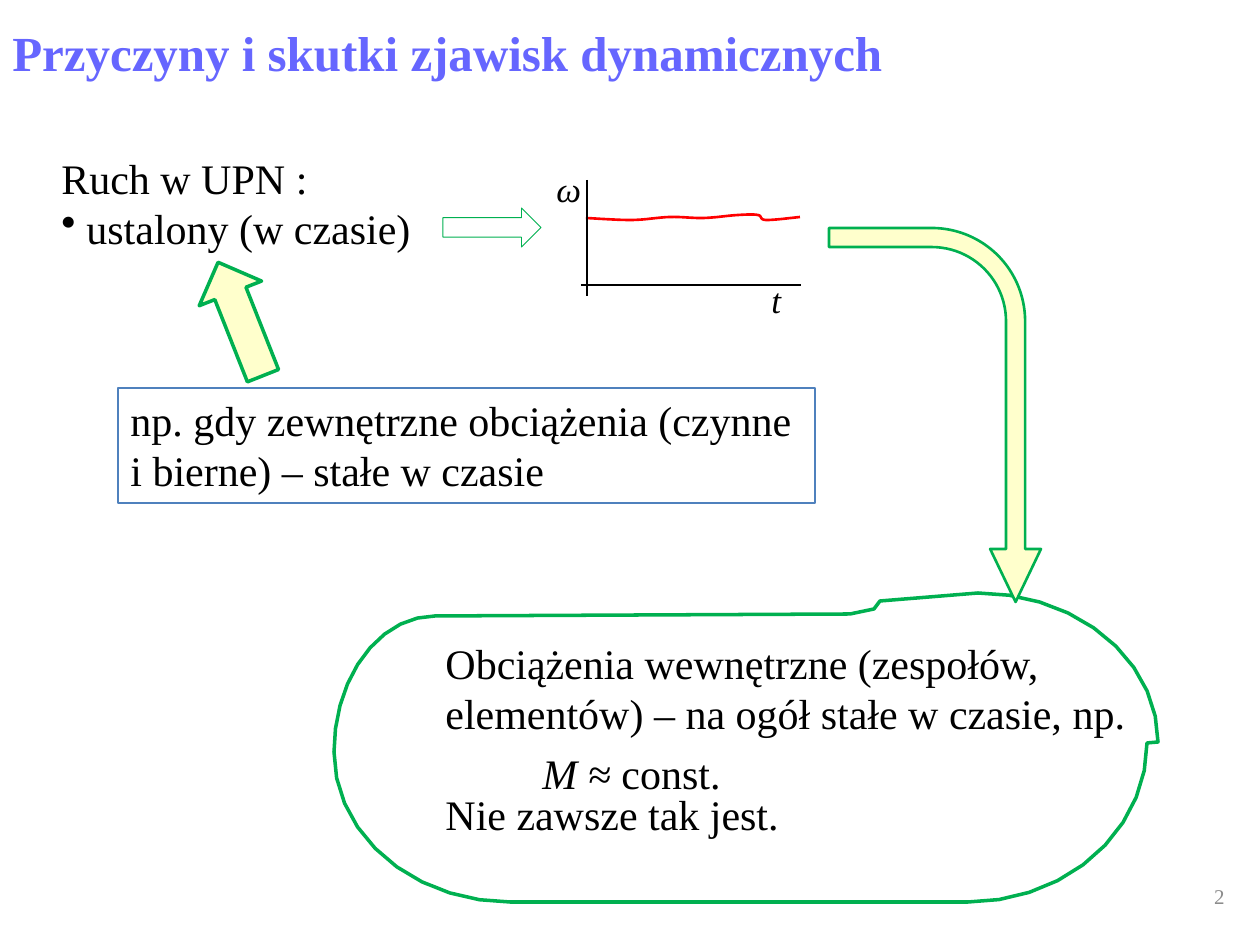
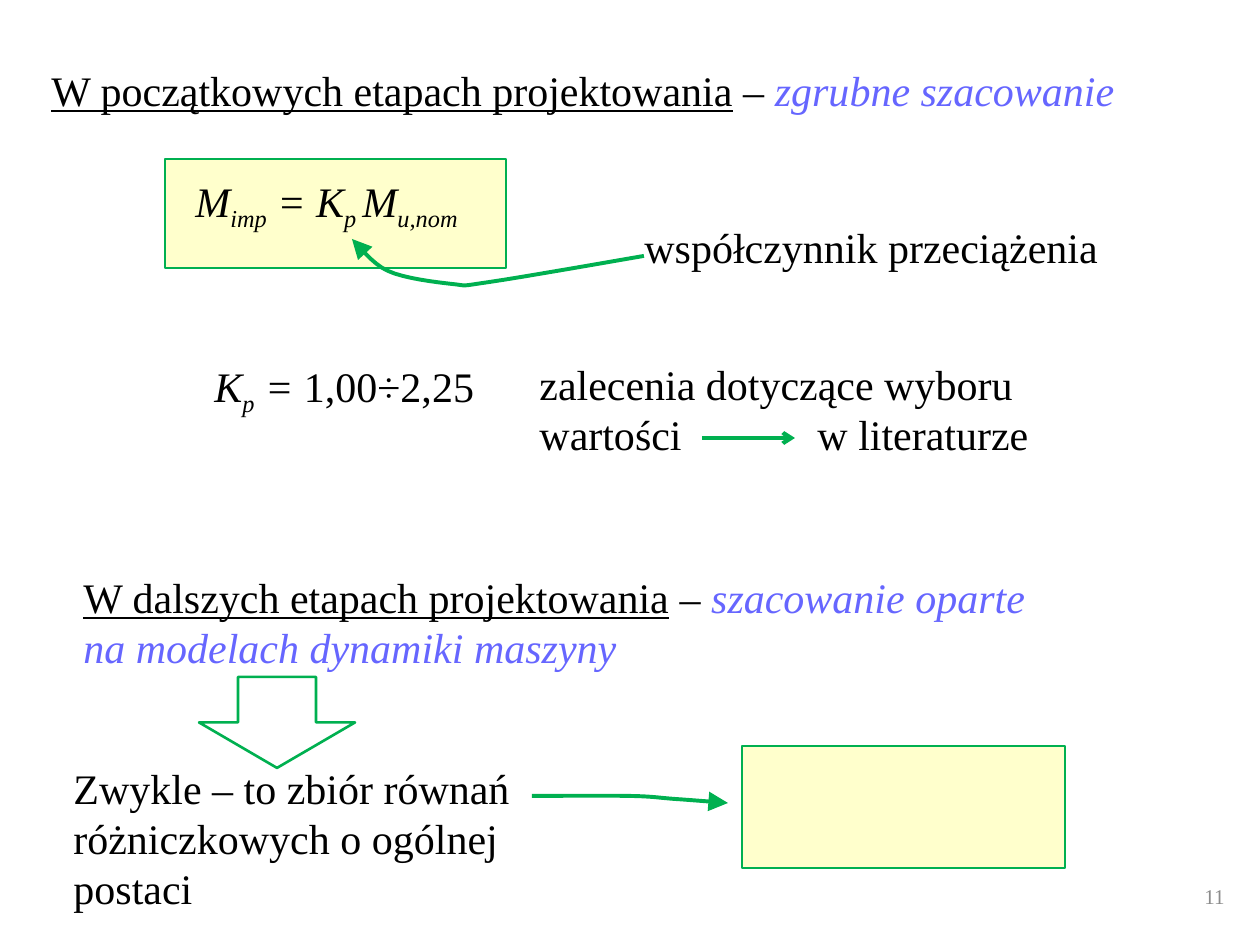
from math import cos, radians, sin

from lxml import etree
from pptx import Presentation
from pptx import util as u
from pptx.dml.color import RGBColor
from pptx.enum import shapes, text
from pptx.oxml.ns import qn

PX = 914400 / 126
FONT = "Times New Roman"
TITLE, BODY, AXIS, SMALL = 28, 24, 20, 12
BLACK, BLUE, GREY, RED = "000000", "6666FF", "8C8C8C", "FF0000"
GREEN, CREAM, FRAME = "00B050", "FFFFCC", "4F81BD"
THIN, MEDIUM, CLOUD, THICK = 0.75, 1.5, 2, 2.25
NUMBER_BOX = (1182, 871, 55, 50)
NOTE_BOX = (118, 388, 697, 115)
BULLET_INDENT, TAB_STOP = round(25 * PX), round(278 * PX)
FORMULA_GAP = u.Pt(29)
rgb = RGBColor.from_string
SH = shapes.MSO_SHAPE


def style(sp, fill, line, width, head=None, tail=None):
    """Set fill, line and arrowheads, and switch the shadow off."""
    if fill:
        sp.fill.solid()
        sp.fill.fore_color.rgb = rgb(fill)
    elif hasattr(sp, "fill"):
        sp.fill.background()
    sp.line.color.rgb = rgb(line)
    sp.line.width = u.Pt(width)
    spPr = sp._element.spPr
    for tag, kind in (("a:headEnd", head), ("a:tailEnd", tail)):
        if kind:
            size = "lg" if kind == "triangle" else "med"
            etree.SubElement(spPr.find(qn("a:ln")), qn(tag), type=kind, w=size, len=size)
    etree.SubElement(spPr, qn("a:effectLst"))


def outline(s, pts, line, width, closed=False, **ends):
    """Draw a closed outline, or an open curve running smoothly through pts."""
    if not closed:
        # Catmull-Rom: each span is shaped by its two ends and their neighbours
        padded = [pts[0], *pts, pts[-1]]
        curve = [pts[0]]
        for span in zip(padded, padded[1:], padded[2:], padded[3:]):
            for t in [n / 8 for n in range(1, 9)]:
                curve.append([b + t / 2 * (c - a + t * (2 * a - 5 * b + 4 * c - d
                                                        + t * (3 * b - a - 3 * c + d)))
                              for a, b, c, d in zip(*span)])
        pts = curve
    pts = [(x * PX, y * PX) for x, y in pts]
    fb = s.shapes.build_freeform(*pts[0])
    fb.add_line_segments(pts[1:], close=closed)
    style(fb.convert_to_shape(), None, line, width, **ends)


prs = Presentation()
prs.slide_width, prs.slide_height = u.Inches(10), u.Inches(7.5)
causes, stages = [prs.slides.add_slide(prs.slide_layouts[6]) for _ in range(2)]

# Speed over time: nearly constant, with one small dip
speed = [(586, 218), (632, 220), (670, 217), (704, 218), (738, 215), (758, 215),
         (766, 220), (800, 217)]
outline(causes, speed, RED, MEDIUM)

# Cloud: a quarter ellipse per corner, clockwise from the top right,
# then a small step where the top edge meets the raised right part
corners = [(978, 742, 180, 149), (968, 743, 179, 159), (510, 752, 176, 150), (435, 752, 101, 136)]
step_up = [(850, 614), (874, 609), (880, 601)]
cloud = []
for quarter, (cx, cy, rx, ry) in enumerate(corners):
    start = 90 * quarter - 90
    for angle in range(start, start + 91, 10):
        cloud.append((cx + rx * cos(radians(angle)), cy + ry * sin(radians(angle))))
outline(causes, cloud + step_up, GREEN, CLOUD, closed=True)

# Block arrows and boxes: slide, shape, place, rotation, fill, line width, adjustments
for s, kind, place, turn, fill, width, adj in [
    (causes, SH.RIGHT_ARROW, (443, 208, 98, 39), 0, None, 0.5, ()),
    (causes, SH.UP_ARROW, (207, 258, 67, 122), 338.4, CREAM, CLOUD, ()),
    (causes, SH.BENT_ARROW, (748, 309, 374, 212), 90, CREAM, MEDIUM, (0.09, 0.12, 0.25, 0.44)),
    (stages, SH.RECTANGLE, (165, 159, 341, 109), 0, CREAM, MEDIUM, ()),
    (stages, SH.DOWN_ARROW, (199, 677, 156, 91), 0, None, MEDIUM, ()),
    (stages, SH.RECTANGLE, (742, 746, 323, 122), 0, CREAM, MEDIUM, ()),
]:
    sp = s.shapes.add_shape(kind, *[u.Emu(round(v * PX)) for v in place])
    sp.rotation = turn
    for i, value in enumerate(adj):
        sp.adjustments[i] = value
    style(sp, fill, GREEN, width)

# Chart axes and the straight arrow: slide, from and to, colour, line width, arrowhead
for s, ends, line, width, tail in [
    (causes, (587, 180, 587, 296), BLACK, THIN, None),
    (causes, (581, 285, 801, 285), BLACK, THIN, None),
    (stages, (702, 438, 795, 438), GREEN, THICK, "arrow"),
]:
    axis = s.shapes.add_connector(shapes.MSO_CONNECTOR.STRAIGHT,
                                  *[u.Emu(round(v * PX)) for v in ends])
    style(axis, None, line, width, tail=tail)

# Curved arrows: to the overload factor, and to the empty box
to_factor = [(352, 239), (388, 271), (452, 284), (490, 282), (644, 256)]
to_equations = [(532, 796), (630, 796), (675, 799), (728, 803)]
outline(stages, to_factor, GREEN, THICK, head="triangle")
outline(stages, to_equations, GREEN, THICK, tail="triangle")

# Texts: slide, place, size, colour, paragraphs of (run, marks)
# Run marks: b bold, i italic, u underlined, s subscript, c accent colour
# Paragraph marks: * bullet, g gap above for the formula
texts = [
    (causes, (0, 16, 1023, 72), TITLE, BLUE, [[("Przyczyny i skutki zjawisk dynamicznych", "b")]]),
    (causes, (49, 146, 1211, 115), BODY, BLACK,
     [[("Ruch w UPN :", "")], [("ustalony (w czasie)", "*")]]),
    (causes, (544, 161, 55, 55), AXIS, BLACK, [[("ω", "i")]]),
    (causes, (759, 272, 55, 55), AXIS, BLACK, [[("t", "i")]]),
    (causes, (530, 741, 208, 63), BODY, BLACK, [[("M ≈ ", "i"), ("const.", "")]]),
    (causes, (433, 631, 740, 217), BODY, BLACK,
     [[("Obciążenia wewnętrzne (zespołów, elementów) – na ogół stałe w czasie, np.", "")],
      [("Nie zawsze tak jest.", "g")]]),
    (causes, NOTE_BOX, BODY, BLACK,
     [[("np. gdy zewnętrzne obciążenia (czynne i bierne) – stałe w czasie", "")]]),
    (causes, NUMBER_BOX, SMALL, GREY, [[("2", "")]]),
    (stages, (39, 58, 1221, 63), BODY, BLACK,
     [[("W początkowych etapach projektowania", "u"), (" – ", ""),
       ("zgrubne szacowanie", "ic")]]),
    (stages, (183, 169, 325, 63), BODY, BLACK,
     [[("M", "i"), ("imp", "is"), (" = K", "i"), ("p ", "is"), ("M", "i"), ("u,nom", "is")]]),
    (stages, (632, 215, 518, 63), BODY, BLACK, [[("współczynnik przeciążenia", "")]]),
    (stages, (202, 354, 325, 63), BODY, BLACK,
     [[("K", "i"), ("p", "is"), (" = ", "i"), ("1,00÷2,25", "")]]),
    (stages, (527, 352, 533, 115), BODY, BLACK,
     [[("zalecenia dotyczące wyboru wartości\tw literaturze", "")]]),
    (stages, (71, 565, 1007, 115), BODY, BLACK,
     [[("W dalszych etapach projektowania", "u"), (" – ", ""),
       ("szacowanie oparte na modelach dynamiki maszyny", "ic")]]),
    (stages, (61, 756, 551, 165), BODY, BLACK,
     [[("Zwykle ‒ to zbiór równań różniczkowych o ogólnej postaci", "")]]),
    (stages, NUMBER_BOX, SMALL, GREY, [[("11", "")]]),
]
for s, place, size, colour, paragraphs in texts:
    tb = s.shapes.add_textbox(*[u.Emu(round(v * PX)) for v in place])
    tf = tb.text_frame
    tf.word_wrap = True
    if place == NOTE_BOX:
        style(tb, None, FRAME, THIN)
    for i, runs in enumerate(paragraphs):
        p = tf.add_paragraph() if i else tf.paragraphs[0]
        if place == NUMBER_BOX:
            tf.vertical_anchor = text.MSO_ANCHOR.MIDDLE
            p.alignment = text.PP_ALIGN.RIGHT
        for words, marks in runs:
            r = p.add_run()
            r.text = words
            for name, value in {"name": FONT, "size": u.Pt(size), "bold": "b" in marks,
                                "italic": "i" in marks, "underline": "u" in marks}.items():
                setattr(r.font, name, value)
            r.font.color.rgb = rgb(BLUE if "c" in marks else colour)
            if "s" in marks:
                r._r.get_or_add_rPr().set("baseline", "-25000")
        # Paragraph format: bullet, gap, tab over the straight arrow
        pPr = p._p.get_or_add_pPr()
        if "*" in marks:
            pPr.set("marL", str(BULLET_INDENT))
            pPr.set("indent", str(-BULLET_INDENT))
            etree.SubElement(pPr, qn("a:buChar"), char="•")
        if "g" in marks:
            p.space_before = FORMULA_GAP
        if "\t" in words:
            tabs = etree.SubElement(pPr, qn("a:tabLst"))
            etree.SubElement(tabs, qn("a:tab"), pos=str(TAB_STOP), algn="l")

prs.save("out.pptx")
